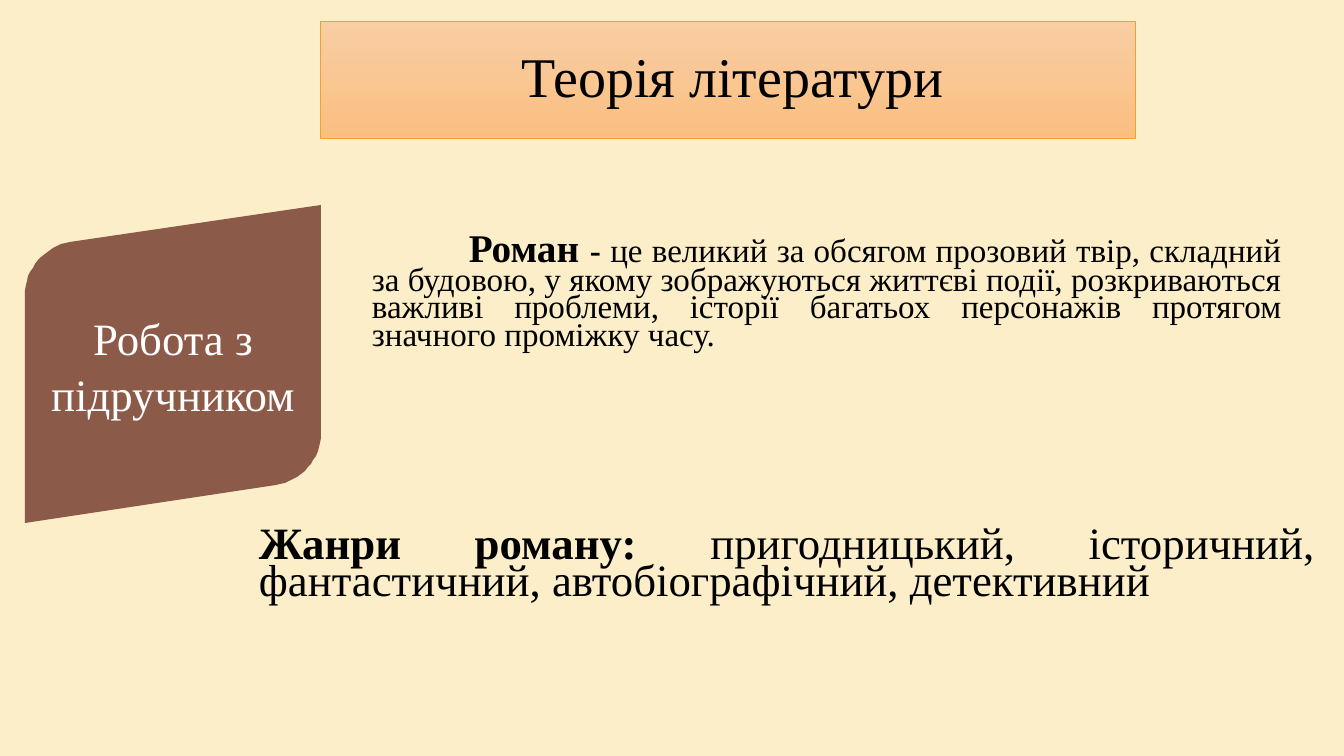
"""Builds a literature theory slide about the novel and its genres."""
from math import cos, pi, sin

from pptx import Presentation
from pptx.dml.color import RGBColor
from pptx.enum.shapes import MSO_SHAPE
from pptx.enum.text import MSO_ANCHOR, PP_ALIGN
from pptx.util import Pt

RECT = MSO_SHAPE.RECTANGLE
TOP, MID = MSO_ANCHOR.TOP, MSO_ANCHOR.MIDDLE
MIDDLE, JUST = PP_ALIGN.CENTER, PP_ALIGN.JUSTIFY
PX = 9072

THEME = {
    "font": "Times New Roman", "page": "FBEEC9", "ink": "000000",
    "light": "FFFFFF", "leaf": "8B5A49", "edge": "F0A22E",
    "fade": ("F9CEA4", "FABE81"),
    "head": 40, "big": 32, "term": 28, "body": 23.6,
}

TITLE = [("Теорія літератури", "head", False)]
TASK = [("Робота з підручником", "big", False)]
NOVEL = [
    ("Роман ", "term", True),
    ("- ", "body", True),
    ("це великий за обсягом прозовий твір, складний за будовою, у якому "
     "зображуються життєві події, розкриваються важливі проблеми, історії "
     "багатьох персонажів протягом значного проміжку часу.", "body", False),
]
GENRES = [
    ("Жанри роману: ", "big", True),
    ("пригодницький, історичний, фантастичний, автобіографічний, "
     "детективний", "big", False),
]

BANNER = (320, 21, 815, 117)
NOTES = [
    (NOVEL, (362, 231, 930, 230), 97),
    (GENRES, (249, 524, 1076, 86), 0),
]
LEAF = {"left": 25, "top": 249, "wide": 296, "high": 274,
        "round": 45, "slope": 0.15, "steps": 16}


def color(name):
    return RGBColor.from_string(THEME.get(name, name))


def scale(box):
    return [v * PX for v in box]


def apply(item, values):
    for name, value in values.items():
        setattr(item, name, value)


def write(shape, runs, ink, frame, para, indent=0):
    text = shape.text_frame
    apply(text, {"word_wrap": True, **frame})
    line = text.paragraphs[0]
    apply(line, para)
    if indent:
        line._p.get_or_add_pPr().set("indent", str(indent * PX))
    for words, size, bold in runs:
        run = line.add_run()
        run.text = words
        apply(run.font, {"name": THEME["font"], "size": Pt(THEME[size]),
                         "bold": bold})
        run.font.color.rgb = color(ink)


def outline():
    left, top, wide, high, r, slope, steps = LEAF.values()
    arc = [pi / 2 * i / steps for i in range(steps + 1)]
    half = [(r - r * cos(a), r - r * sin(a)) for a in arc] + [(wide, 0)]
    flat = half + [(wide - x, high - y) for x, y in half]
    return [(left + x, top + y - slope * x) for x, y in flat]


def add_banner(shapes):
    shape = shapes.add_shape(RECT, *scale(BANNER))
    shape.shadow.inherit = False
    shape.fill.gradient()
    shape.fill.gradient_angle = 270
    for stop, shade in zip(shape.fill.gradient_stops, THEME["fade"]):
        stop.color.rgb = color(shade)
    shape.line.color.rgb = color("edge")
    shape.line.width = Pt(0.5)
    write(shape, TITLE, "ink",
          {"vertical_anchor": MID, "margin_left": 20 * PX},
          {"alignment": MIDDLE, "line_spacing": 0.9})


def add_leaf(shapes):
    first, *rest = outline()
    pen = shapes.build_freeform(*first, scale=PX)
    pen.add_line_segments(rest, close=True)
    shape = pen.convert_to_shape()
    shape.shadow.inherit = False
    shape.fill.solid()
    shape.fill.fore_color.rgb = color("leaf")
    shape.line.fill.background()
    write(shape, TASK, "light", {"vertical_anchor": MID},
          {"alignment": MIDDLE, "line_spacing": 1.05})


def main():
    deck = Presentation()
    apply(deck, {"slide_width": 1344 * PX, "slide_height": 756 * PX})
    slide = deck.slides.add_slide(deck.slide_layouts[6])
    slide.background.fill.solid()
    slide.background.fill.fore_color.rgb = color("page")
    add_banner(slide.shapes)
    add_leaf(slide.shapes)
    for runs, box, indent in NOTES:
        note = slide.shapes.add_textbox(*scale(box))
        write(note, runs, "ink", {"vertical_anchor": TOP},
              {"alignment": JUST, "line_spacing": 0.7,
               "space_before": Pt(10)}, indent)
    deck.save("out.pptx")


if __name__ == "__main__":
    main()
